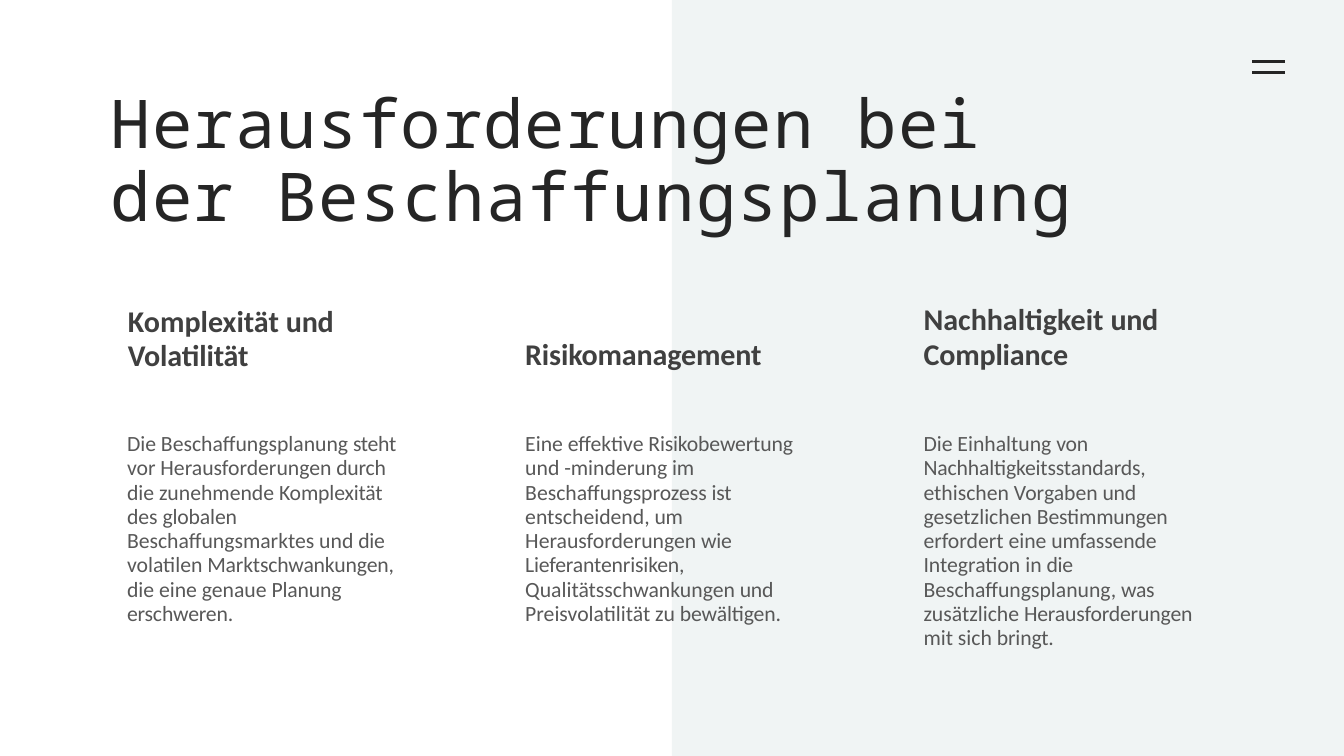
from dataclasses import dataclass

from pptx import Presentation
from pptx.dml.color import RGBColor
from pptx.enum.shapes import MSO_SHAPE
from pptx.enum.text import MSO_ANCHOR, MSO_AUTO_SIZE, PP_ALIGN
from pptx.util import Inches, Pt

COLORS = {"panel": "F0F4F4", "ink": "252525", "heading": "404040", "body": "585858"}
WIDTH, HEIGHT = 13.33, 7.5

Runs = list[tuple[str, float]]


@dataclass
class Style:
    font: str
    size: float
    color: str
    bold: bool = False


@dataclass
class Block:
    left: float
    top: float
    width: float
    height: float
    inset: float
    before: float
    spacing: float | Pt
    paragraphs: list[Runs]
    indent: float = 0.01


TITLE_STYLE = Style("Noto Sans Mono", 48, "ink")
HEADING_STYLE = Style("Calibri", 21.5, "heading", True)
BODY_STYLE = Style("Calibri", 15.5, "body")

TITLE = Block(1, 0.35, 9.76, 1.98, 0.54, 7.6, Pt(51.8), [[
    ("Herausforderungen ", 0.8), ("bei ", 0.9), ("der ", 0.8),
    ("Beschaffungsplanung", 1.2)]], 0.1)

HEADINGS = [
    Block(1.26, 2.98, 2.13, 0.72, 0.05, 3.8, Pt(24), [[
        ("Komplexität ", 0), ("und ", -0.2), ("Volatilität", -0.1)]]),
    Block(5.2, 3.31, 2.46, 0.39, 0.02, 1.2, 1.0, [[("Risikomanagement", -0.1)]]),
    Block(9.15, 2.97, 2.42, 0.73, 0.02, 1.3, Pt(24.9), [
        [("Nachhaltigkeit ", 0), ("und", -0.2)], [("Compliance", -0.1)]]),
]

BODIES = [
    Block(1.25, 4.26, 2.79, 1.98, 0.03, 2.5, 0.93, [[
        ("Die Beschaffungsplanung ", 0), ("steht ", -0.2),
        ("vor Herausforderungen ", 0), ("durch ", -0.2),
        ("die zunehmende ", 0), ("Komplexität ", -0.1),
        ("des ", 0), ("globalen ", -0.1),
        ("Beschaffungsmarktes und ", 0), ("die ", -0.2),
        ("volatilen ", 0), ("Marktschwankungen, ", -0.1),
        ("die eine genaue ", 0), ("Planung erschweren.", -0.1)]]),
    Block(5.2, 4.26, 2.77, 1.98, 0.03, 2.5, 0.93, [[
        ("Eine effektive ", 0), ("Risikobewertung ", -0.1),
        ("und ", 0), ("-", -0.4), ("minderung ", 0), ("im ", -0.2),
        ("Beschaffungsprozess ", 0), ("ist ", -0.2),
        ("entscheidend, ", 0), ("um ", -0.2),
        ("Herausforderungen ", 0), ("wie ", -0.2),
        ("Lieferantenrisiken, ", -0.1),
        ("Qualitätsschwankungen ", 0), ("und ", -0.2),
        ("Preisvolatilität zu ", 0), ("bewältigen.", -0.1)]]),
    Block(9.15, 4.26, 2.77, 2.22, 0.03, 2.5, 0.93, [[
        ("Die Einhaltung ", 0), ("von ", -0.2),
        ("Nachhaltigkeitsstandards, ", -0.1),
        ("ethischen Vorgaben ", 0), ("und ", -0.2),
        ("gesetzlichen ", 0), ("Bestimmungen ", -0.1),
        ("erfordert eine ", 0), ("umfassende ", -0.1),
        ("Integration in ", 0), ("die ", -0.2),
        ("Beschaffungsplanung, ", 0), ("was ", -0.2),
        ("zusätzliche ", 0), ("Herausforderungen ", -0.1),
        ("mit sich ", 0), ("bringt.", -0.1)]]),
]


def rgb(name: str) -> RGBColor:
    return RGBColor.from_string(COLORS[name])


def fill_text(sp, block: Block, style: Style) -> None:
    sp.left, sp.top = Inches(block.left), Inches(block.top)
    sp.width, sp.height = Inches(block.width), Inches(block.height)
    tf = sp.text_frame
    tf.word_wrap = True
    tf.auto_size = MSO_AUTO_SIZE.NONE
    tf.vertical_anchor = MSO_ANCHOR.TOP
    tf.margin_left = tf.margin_right = tf.margin_bottom = 0
    tf.margin_top = Inches(block.inset)
    for i, runs in enumerate(block.paragraphs):
        p = tf.add_paragraph() if i else tf.paragraphs[0]
        p.alignment = PP_ALIGN.LEFT
        p.line_spacing = block.spacing
        p.space_before = Pt(0 if i else block.before)
        pPr = p._p.get_or_add_pPr()
        pPr.set("marL", str(Inches(block.indent)))
        pPr.set("indent", "0")
        for text, tracking in runs:
            r = p.add_run()
            r.text = text
            r.font.name = style.font
            r.font.size = Pt(style.size)
            r.font.bold = style.bold
            r.font.color.rgb = rgb(style.color)
            r._r.get_or_add_rPr().set("spc", str(round(tracking * 100)))


def add_panel(s):
    sp = s.shapes.add_shape(MSO_SHAPE.RECTANGLE, Inches(WIDTH / 2), 0,
                            Inches(WIDTH / 2), Inches(HEIGHT))
    sp.shadow.inherit = False
    sp.fill.solid()
    sp.fill.fore_color.rgb = rgb("panel")
    sp.line.fill.background()
    return sp


def add_menu_icon(s, left: float, right: float, top: float, bottom: float) -> None:
    fb = s.shapes.build_freeform(Inches(left), Inches(top))
    fb.add_line_segments([(Inches(right), Inches(top))], close=False)
    fb.move_to(Inches(left), Inches(bottom))
    fb.add_line_segments([(Inches(right), Inches(bottom))], close=False)
    sp = fb.convert_to_shape()
    sp.shadow.inherit = False
    sp.fill.background()
    sp.line.color.rgb = rgb("ink")
    sp.line.width = Pt(1.5)


def main() -> None:
    prs = Presentation()
    prs.slide_width, prs.slide_height = Inches(WIDTH), Inches(HEIGHT)
    s = prs.slides.add_slide(prs.slide_layouts[5])
    title = s.shapes.title
    title.element.addprevious(add_panel(s).element)
    add_menu_icon(s, 12.42, 12.75, 0.61, 0.72)
    fill_text(title, TITLE, TITLE_STYLE)
    for blocks, style in ((HEADINGS, HEADING_STYLE), (BODIES, BODY_STYLE)):
        for block in blocks:
            fill_text(s.shapes.add_textbox(0, 0, 0, 0), block, style)
    prs.save("out.pptx")


if __name__ == "__main__":
    main()
